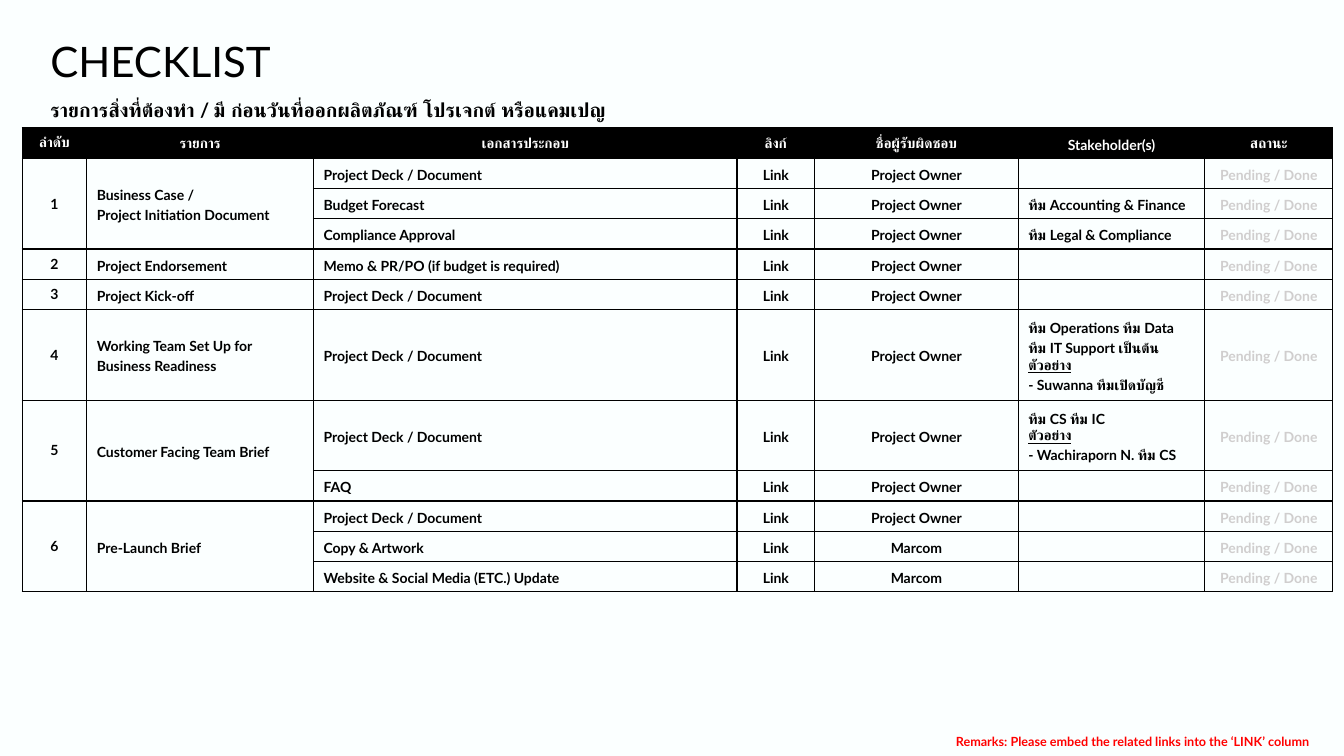
from lxml import etree
from pptx import Presentation
from pptx.dml.color import RGBColor
from pptx.enum.text import MSO_ANCHOR, MSO_AUTO_SIZE, PP_ALIGN
from pptx.oxml import parse_xml
from pptx.oxml.ns import nsdecls, qn
from pptx.util import Inches, Pt

LEFT, CENTER, RIGHT = PP_ALIGN.LEFT, PP_ALIGN.CENTER, PP_ALIGN.RIGHT
MIDDLE, TOP = MSO_ANCHOR.MIDDLE, MSO_ANCHOR.TOP
GROW, FIXED = MSO_AUTO_SIZE.SHAPE_TO_FIT_TEXT, MSO_AUTO_SIZE.NONE

FONT = "Lato"
PAPER, BLACK, WHITE, RED, GREY = "FBFFFF", "000000", "FFFFFF", "FF0000", "D0CECE"
WIDTH, HEIGHT = 13.33, 7.5
MARGIN = 0.5

HEADERS = ["ลำดับ", "รายการ", "เอกสารประกอบ", "ลิงก์", "ชื่อผู้รับผิดชอบ",
           "Stakeholder(s)", "สถานะ"]
COLUMN_WIDTHS = [0.64, 2.25, 4.2, 0.77, 2.02, 1.85, 1.27]
COLUMN_ALIGNS = [CENTER, LEFT, LEFT, CENTER, CENTER, LEFT, CENTER]
ROW_HEIGHT, EXTRA_LINE = 0.3, 0.2
DECK, OWNER, MARCOM = "Project Deck / Document", "Project Owner", "Marcom"
EXAMPLE = "ตัวอย่าง"

# Each task: name, then its documents as (document, owner, stakeholders)
TASKS = [
    ("Business Case /\nProject Initiation Document", [
        (DECK, OWNER, ""),
        ("Budget Forecast", OWNER, "ทีม Accounting & Finance"),
        ("Compliance Approval", OWNER, "ทีม Legal & Compliance")]),
    ("Project Endorsement", [("Memo & PR/PO (if budget is required)", OWNER, "")]),
    ("Project Kick-off", [(DECK, OWNER, "")]),
    ("Working Team Set Up for Business Readiness", [
        (DECK, OWNER, "ทีม Operations ทีม Data\nทีม IT Support เป็นต้น\n"
                      f"{EXAMPLE}\n- Suwanna ทีมเปิดบัญชี")]),
    ("Customer Facing Team Brief", [
        (DECK, OWNER, f"ทีม CS ทีม IC\n{EXAMPLE}\n- Wachiraporn N. ทีม CS"),
        ("FAQ", OWNER, "")]),
    ("Pre-Launch Brief", [
        (DECK, OWNER, ""),
        ("Copy & Artwork", MARCOM, ""),
        ("Website & Social Media (ETC.) Update", MARCOM, "")]),
]


def color(value):
    return RGBColor.from_string(value)


def write(frame, text, size, ink, bold=True, align=LEFT, spacing=1.2):
    frame.text = text
    for paragraph in frame.paragraphs:
        paragraph.alignment = align
        paragraph.line_spacing = spacing
        for run in paragraph.runs:
            run.font.name = FONT
            run.font.size = Pt(size)
            run.font.bold = bold
            run.font.color.rgb = color(ink)
            if run.text == EXAMPLE:
                run.font.underline = True
        if not paragraph.runs:
            # keeps an empty cell as low as one line of text
            etree.SubElement(paragraph._p, qn("a:endParaRPr"), sz=str(size * 100))


def add_text(slide, box, text, size, ink, insets=(0, 0, 0, 0), anchor=TOP,
             fit=GROW, **style):
    frame = slide.shapes.add_textbox(*map(Inches, box)).text_frame
    frame.word_wrap = True
    frame.auto_size = fit
    frame.vertical_anchor = anchor
    (frame.margin_left, frame.margin_top,
     frame.margin_right, frame.margin_bottom) = map(Inches, insets)
    write(frame, text, size, ink, **style)


def add_borders(cell):
    properties = cell._tc.get_or_add_tcPr()
    for side in "LRTB":
        properties.append(parse_xml(
            f'<a:ln{side} {nsdecls("a")} w="{Pt(1)}"><a:solidFill>'
            f'<a:srgbClr val="{BLACK}"/></a:solidFill></a:ln{side}>'))


def fill_cell(cell, text, ink, align, spacing=1.2, fill=None):
    cell.vertical_anchor = MIDDLE
    write(cell.text_frame, text, 10, ink, align=align, spacing=spacing)
    add_borders(cell)
    if fill:
        cell.fill.solid()
        cell.fill.fore_color.rgb = color(fill)
    else:
        cell.fill.background()


def checklist_rows():
    """Return the body rows; number and task show only on a task's first row."""
    rows = []
    for number, (task, documents) in enumerate(TASKS, 1):
        for index, (document, owner, stakeholders) in enumerate(documents):
            heading = ["", ""] if index else [str(number), task]
            rows.append(heading + [document, "Link", owner, stakeholders, "Pending / Done"])
    return rows


def add_checklist(slide, left, top):
    rows = checklist_rows()
    heights = [ROW_HEIGHT] + [ROW_HEIGHT + EXTRA_LINE * row[5].count("\n") for row in rows]
    table = slide.shapes.add_table(
        len(heights), len(HEADERS), Inches(left), Inches(top),
        Inches(sum(COLUMN_WIDTHS)), Inches(sum(heights))).table
    table.first_row = table.horz_banding = False
    for column, width in zip(table.columns, COLUMN_WIDTHS):
        column.width = Inches(width)
    for row, height in zip(table.rows, heights):
        row.height = Inches(height)

    for c, header in enumerate(HEADERS):
        fill_cell(table.cell(0, c), header, WHITE, CENTER, 1.2 if c else 1.0, BLACK)
    for r, row in enumerate(rows, 1):
        for c, text in enumerate(row):
            ink = GREY if c == len(HEADERS) - 1 else BLACK
            fill_cell(table.cell(r, c), text, ink, COLUMN_ALIGNS[c], 1.2 if c else 1.0)

    first = 1
    for _, documents in TASKS:
        last = first + len(documents) - 1
        if last > first:
            for c in (0, 1):
                table.cell(first, c).merge(table.cell(last, c))
        first = last + 1


def main():
    presentation = Presentation()
    presentation.slide_width, presentation.slide_height = Inches(WIDTH), Inches(HEIGHT)
    slide = presentation.slides.add_slide(presentation.slide_layouts[6])
    slide.background.fill.solid()
    slide.background.fill.fore_color.rgb = color(PAPER)

    add_checklist(slide, 0.22, 1.27)
    add_text(slide, (MARGIN, 0.42, 12.44, 0.45), "CHECKLIST", 30, BLACK,
             anchor=MIDDLE, fit=FIXED, bold=False, spacing=0.8)
    add_text(slide, (8.79, 7.21, 4.29, 0.35),
             "Remarks: Please embed the related links into the ‘LINK’ column", 9, RED,
             insets=(0.1, 0.1, 0.1, 0.1), align=RIGHT, spacing=1.0)
    add_text(slide, (MARGIN, 0.88, 12.58, 0.37),
             "รายการสิ่งที่ต้องทำ / มี ก่อนวันที่ออกผลิตภัณฑ์ โปรเจกต์ หรือแคมเปญ", 14, BLACK,
             insets=(0, 0.05, 0.1, 0.05))
    presentation.save("out.pptx")


if __name__ == "__main__":
    main()
